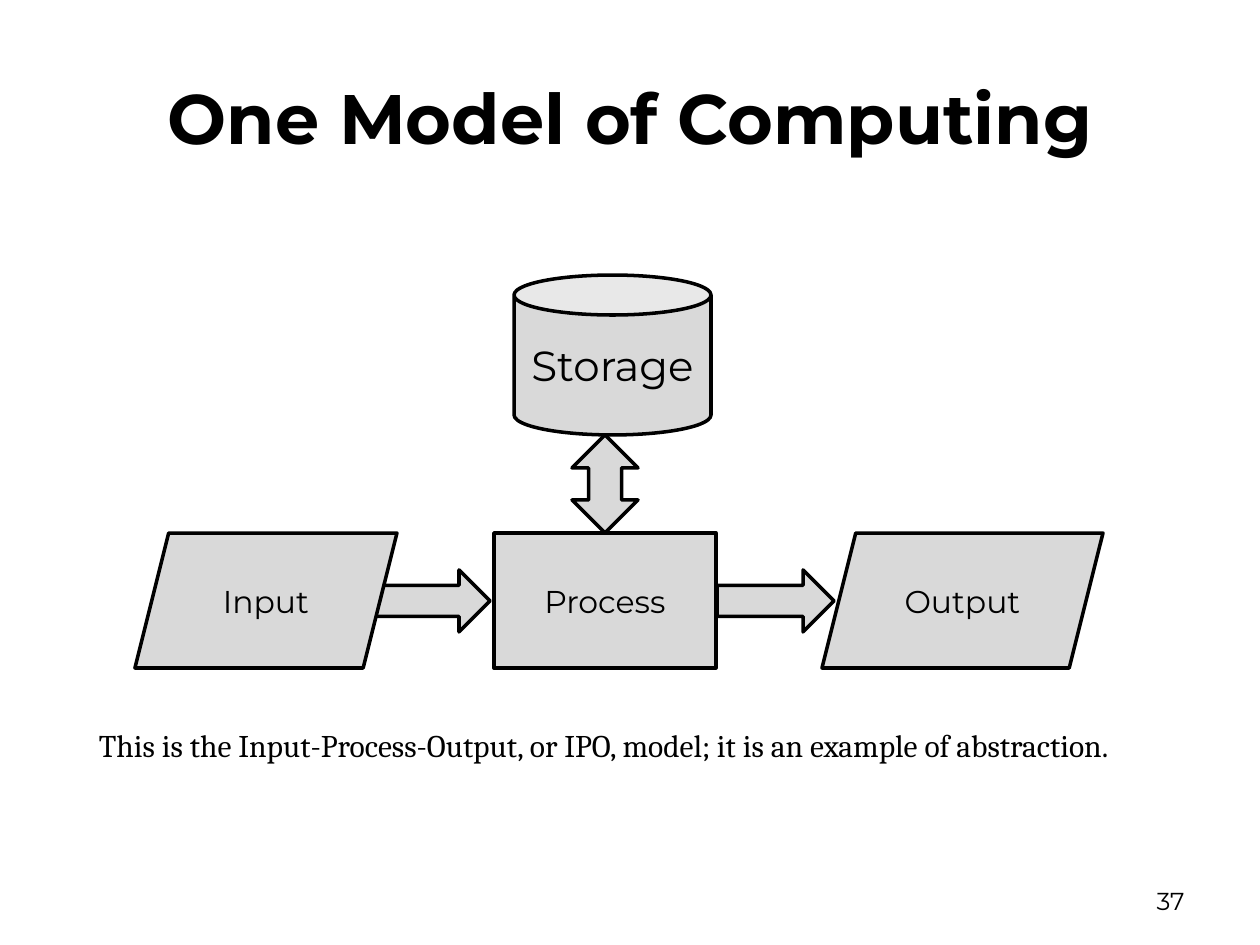
from pptx import Presentation
from pptx.dml.color import RGBColor
from pptx.enum.shapes import MSO_SHAPE
from pptx.enum.text import MSO_ANCHOR, PP_ALIGN
from pptx.util import Emu, Pt

PX = 914400 / 126
COLORS = {"ink": "000000", "fill": "D9D9D9"}


def px(length):
    return Emu(round(length * PX))


def color(name):
    return RGBColor.from_string(COLORS[name])


def place(shape, box):
    shape.left, shape.top, shape.width, shape.height = map(px, box)


def write(shape, text, size, font="Montserrat", align=PP_ALIGN.CENTER,
          anchor=MSO_ANCHOR.MIDDLE, bold=False):
    frame = shape.text_frame
    frame.word_wrap = True
    frame.vertical_anchor = anchor
    para = frame.paragraphs[0]
    para.alignment = align
    span = para.add_run()
    span.text = text
    span.font.name = font
    span.font.size = Pt(size)
    span.font.bold = bold
    span.font.color.rgb = color("ink")


def add_title(page, box):
    title = page.shapes.title
    place(title, box)
    write(title, "One Model of Computing", 40, bold=True)


def add_text(page, box, text, size, **style):
    label = page.shapes.add_textbox(*map(px, box))
    write(label, text, size, **style)
    return label


def add_block(page, kind, box, text="", size=18):
    block = page.shapes.add_shape(kind, *map(px, box))
    block.shadow.inherit = False
    block.fill.solid()
    block.fill.fore_color.rgb = color("fill")
    block.line.color.rgb = color("ink")
    block.line.width = Pt(2)
    if text:
        write(block, text, size)
        frame = block.text_frame
        frame.margin_left = frame.margin_right = px(6)
    return block


def add_diagram(page, box):
    left, top, width, height = box
    row_height = 135
    row_top = top + height - row_height
    arrow_width, arrow_height = 117, 62
    arrow_top = row_top + (row_height - arrow_height) // 2 + 1
    process_left, process_width = left + 359, 222
    output_width = 281
    storage_height = 160

    def add_arrow(arrow_left):
        add_block(page, MSO_SHAPE.RIGHT_ARROW,
                  (arrow_left, arrow_top, arrow_width, arrow_height))

    add_arrow(left + 238)
    steps = [
        (MSO_SHAPE.PARALLELOGRAM, left, 262, "Input"),
        (MSO_SHAPE.PARALLELOGRAM, left + width - output_width, output_width, "Output"),
        (MSO_SHAPE.RECTANGLE, process_left, process_width, "Process"),
    ]
    for kind, step_left, step_width, text in steps:
        add_block(page, kind, (step_left, row_top, step_width, row_height), text)
    add_block(page, MSO_SHAPE.CAN, (left + 379, top, 197, storage_height), "Storage", 24)
    add_arrow(process_left + process_width + 1)

    length, thickness = row_top - top - storage_height, 66
    middle = process_left + process_width // 2
    link = add_block(page, MSO_SHAPE.LEFT_RIGHT_ARROW,
                     (middle - length // 2, row_top - (length + thickness) // 2,
                      length, thickness))
    link.rotation = 90


def add_caption(page, box):
    caption = add_text(
        page, box,
        "This is the Input-Process-Output, or IPO, model; it is an example of abstraction.",
        18, font="Cambria", align=PP_ALIGN.LEFT, anchor=MSO_ANCHOR.TOP)
    frame = caption.text_frame
    frame.margin_left = frame.margin_right = px(15)
    frame.margin_top = frame.margin_bottom = px(8)


def main():
    deck = Presentation()
    deck.slide_width, deck.slide_height = px(1260), px(945)
    page = deck.slides.add_slide(deck.slide_layouts[5])
    add_title(page, (63, 38, 1134, 158))
    add_text(page, (903, 876, 294, 50), "37", 14, align=PP_ALIGN.RIGHT)
    add_caption(page, (84, 718, 1090, 92))
    add_diagram(page, (135, 275, 968, 393))
    deck.save("out.pptx")


if __name__ == "__main__":
    main()
